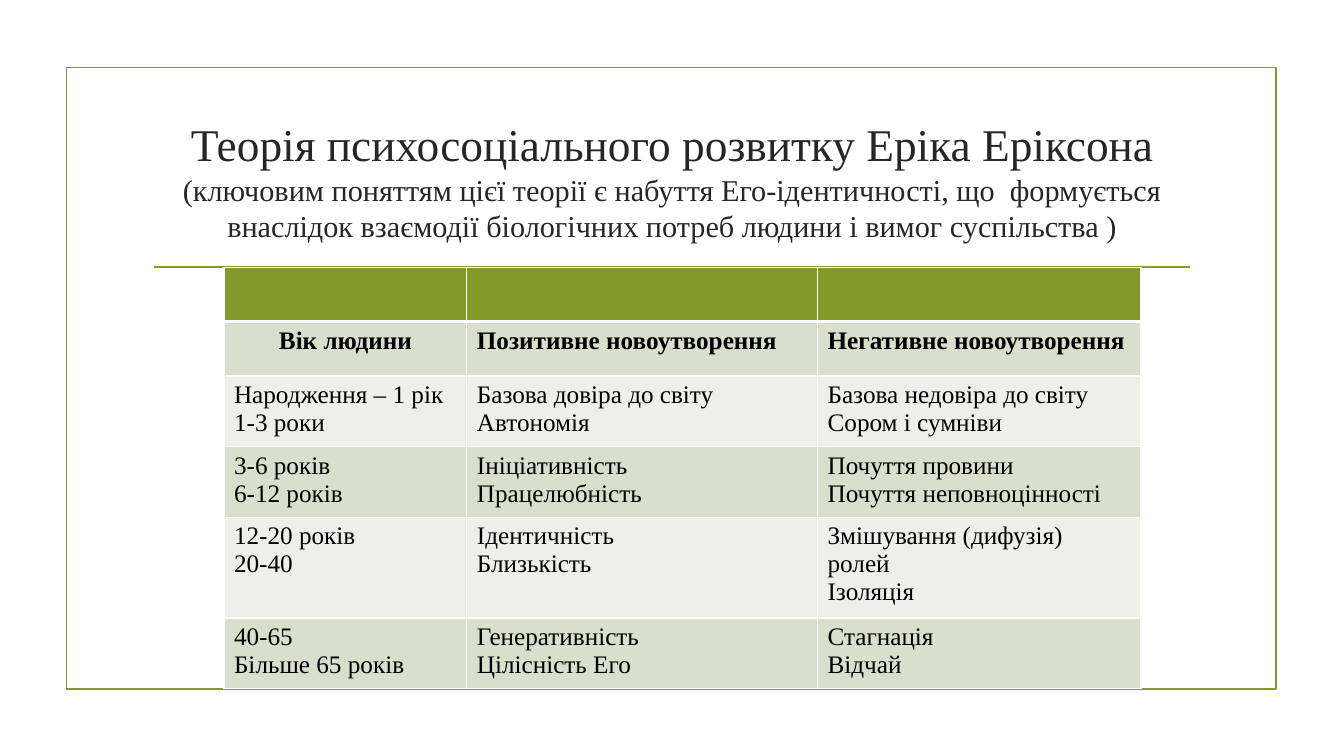
from lxml import etree
from pptx import Presentation
from pptx.dml.color import RGBColor
from pptx.enum.shapes import MSO_CONNECTOR, MSO_SHAPE
from pptx.enum.text import MSO_ANCHOR, PP_ALIGN
from pptx.oxml.ns import qn
from pptx.util import Pt

LINE = MSO_CONNECTOR.STRAIGHT
RECT = MSO_SHAPE.RECTANGLE
MIDDLE = MSO_ANCHOR.MIDDLE
CENTER, LEFT = PP_ALIGN.CENTER, PP_ALIGN.LEFT

OLIVE = RGBColor(0x83, 0x99, 0x2A)
BAND_DARK = RGBColor(0xD9, 0xDE, 0xCD)
BAND_LIGHT = RGBColor(0xED, 0xEF, 0xE8)
INK = RGBColor(0x26, 0x26, 0x26)
BLACK = RGBColor(0, 0, 0)
FONT = "Times New Roman"

RULE_TOP = 190.8
COLUMNS = [173.5, 250.5, 231]
ROW_HEIGHT = 38.9
ROWS = [
    ["", "", ""],
    ["Вік людини", "Позитивне новоутворення", "Негативне новоутворення"],
    ["Народження – 1 рік\n1-3 роки", "Базова довіра до світу\nАвтономія",
     "Базова недовіра до світу\nСором і сумніви"],
    ["3-6 років\n6-12 років", "Ініціативність\nПрацелюбність",
     "Почуття провини\nПочуття неповноцінності"],
    ["12-20 років\n20-40", "Ідентичність\nБлизькість",
     "Змішування (дифузія) ролей\nІзоляція"],
    ["40-65\nБільше 65 років", "Генеративність\nЦілісність Его",
     "Стагнація\nВідчай"],
]


def add_text(p, text, size=18, color=BLACK, bold=False, align=LEFT):
    p.alignment = align
    r = p.add_run()
    r.text = text
    r.font.name = FONT
    r.font.size = Pt(size)
    r.font.bold = bold
    r.font.color.rgb = color


def add_frame(s):
    sp = s.shapes.add_shape(RECT, Pt(47.5), Pt(48.2), Pt(864), Pt(444.2))
    sp.shadow.inherit = False
    sp.fill.background()
    sp.line.color.rgb = OLIVE
    sp.line.width = Pt(1.25)


def add_rule(s):
    c = s.shapes.add_connector(LINE, Pt(110.2), Pt(RULE_TOP), Pt(850.3), Pt(RULE_TOP))
    c.line.color.rgb = OLIVE
    c.line.width = Pt(1.25)
    etree.SubElement(c._element.spPr, qn("a:effectLst"))


def add_title(s):
    tf = s.shapes.add_textbox(Pt(102.2), Pt(77), Pt(756), Pt(103)).text_frame
    tf.word_wrap = True
    tf.vertical_anchor = MIDDLE
    p = tf.paragraphs[0]
    add_text(p, "Теорія психосоціального розвитку Еріка Еріксона ",
             size=32.4, color=INK, align=CENTER)
    add_text(p, "(ключовим поняттям цієї теорії є набуття Его-ідентичності, що  "
                "формується внаслідок взаємодії біологічних потреб людини і вимог "
                "суспільства )", size=21.6, color=INK, align=CENTER)


def set_borders(cell, top, bottom):
    tc_pr = cell._tc.get_or_add_tcPr()
    for side, width in (("L", 1), ("R", 1), ("T", top), ("B", bottom)):
        ln = etree.SubElement(tc_pr, qn(f"a:ln{side}"), w=str(Pt(width)))
        fill = etree.SubElement(ln, qn("a:solidFill"))
        etree.SubElement(fill, qn("a:srgbClr"), val="FFFFFF")


def fill_cell(cell, text, row, col):
    # A thick line parts the header band from the body
    set_borders(cell, top=3 if row == 1 else 1, bottom=3 if row == 0 else 1)
    cell.fill.solid()
    cell.fill.fore_color.rgb = OLIVE if row == 0 else BAND_DARK if row % 2 else BAND_LIGHT
    if not text:
        return
    tf = cell.text_frame
    for i, line in enumerate(text.split("\n")):
        p = tf.add_paragraph() if i else tf.paragraphs[0]
        add_text(p, line, bold=row == 1,
                 align=CENTER if (row, col) == (1, 0) else LEFT)


def add_stage_table(s):
    table = s.shapes.add_table(len(ROWS), len(COLUMNS), Pt(160), Pt(RULE_TOP),
                               Pt(sum(COLUMNS)), Pt(ROW_HEIGHT * len(ROWS))).table
    for column, width in zip(table.columns, COLUMNS):
        column.width = Pt(width)
    for i, texts in enumerate(ROWS):
        table.rows[i].height = Pt(ROW_HEIGHT)
        for j, text in enumerate(texts):
            fill_cell(table.cell(i, j), text, i, j)


def main():
    prs = Presentation()
    prs.slide_width, prs.slide_height = Pt(960), Pt(540)
    s = prs.slides.add_slide(prs.slide_layouts[6])
    # Frame and rule
    add_frame(s)
    add_rule(s)
    # Title and table of life stages
    add_title(s)
    add_stage_table(s)
    prs.save("out.pptx")


if __name__ == "__main__":
    main()
